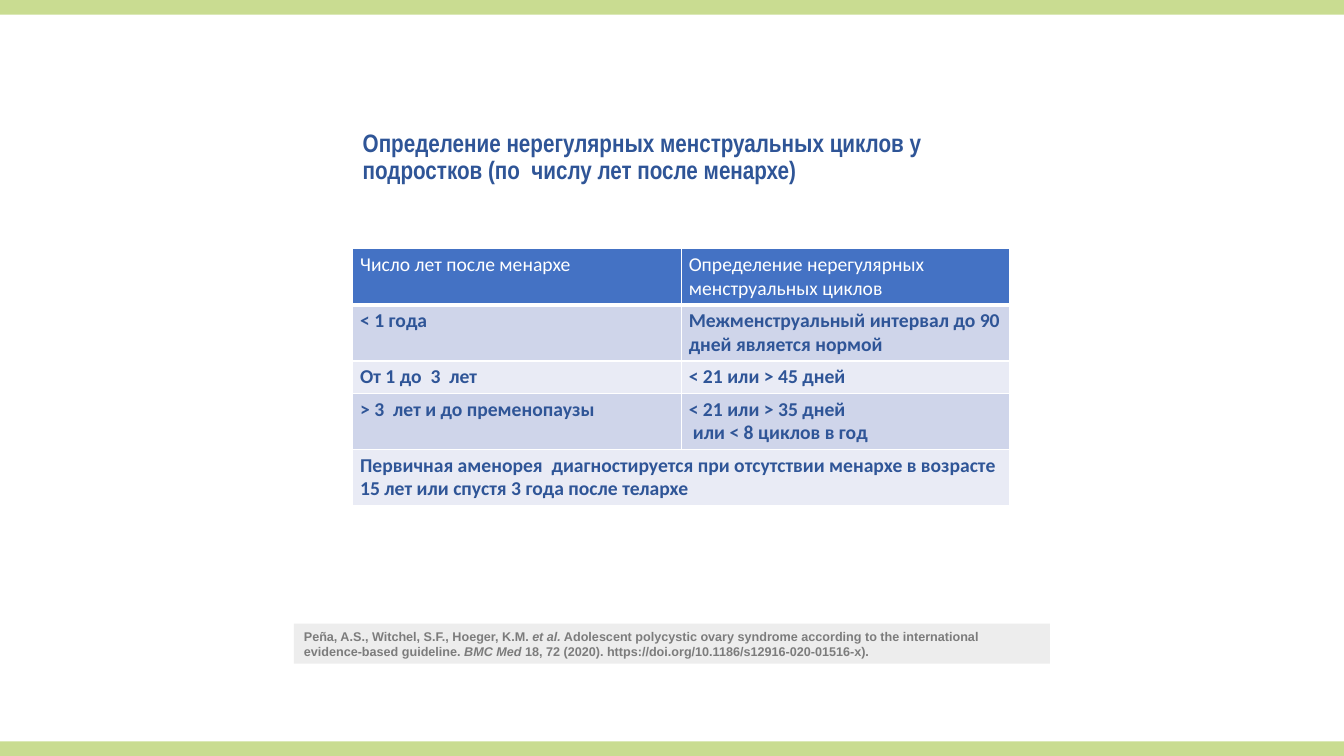
from lxml.etree import SubElement
from pptx import Presentation
from pptx.dml.color import RGBColor
from pptx.enum.shapes import MSO_SHAPE
from pptx.enum.text import MSO_ANCHOR, MSO_AUTO_SIZE, PP_ALIGN
from pptx.oxml.ns import qn
from pptx.util import Pt

PX = 9525
SLIDE_W, SLIDE_H = 1280, 720
BAR_H = 14
COLUMN_W = 313
ROW_HEIGHTS = [52, 52, 30, 52, 52]
SECOND_LINE_INDENT = 4

WHITE = RGBColor(0xFF, 0xFF, 0xFF)
GREEN = RGBColor(0xC9, 0xDC, 0x91)
HEADER_BLUE = RGBColor(0x44, 0x72, 0xC4)
TEXT_BLUE = RGBColor(0x2F, 0x55, 0x97)
BAND_DARK = RGBColor(0xCF, 0xD5, 0xEA)
BAND_LIGHT = RGBColor(0xE9, 0xEB, 0xF5)
CITATION_FILL = RGBColor(0xED, 0xED, 0xED)
CITATION_GREY = RGBColor(0x7C, 0x7C, 0x7C)

TITLE = "Определение нерегулярных менструальных циклов у подростков (по  числу лет после менархе)"
CYCLE_ROWS = [
    ["Число лет после менархе", "Определение нерегулярных менструальных циклов"],
    ["< 1 года", "Межменструальный интервал до 90 дней является нормой"],
    ["От 1 до  3  лет", "< 21 или > 45 дней"],
    ["> 3  лет и до пременопаузы", "< 21 или > 35 дней\nили < 8 циклов в год"],
    ["Первичная аменорея  диагностируется при отсутствии менархе в возрасте 15 лет или спустя 3 года после телархе", ""],
]
CITATION = [
    ("Peña, A.S., Witchel, S.F., Hoeger, K.M. ", False),
    ("et al.", True),
    (" Adolescent polycystic ovary syndrome according to the international evidence-based guideline. ", False),
    ("BMC Med", True),
    (" 18, 72 (2020). https://doi.org/10.1186/s12916-020-01516-x).", False),
]


def add_text(paragraph, text, *, size, font, color, bold=True, italic=False):
    run = paragraph.add_run()
    run.text = text
    run.font.size = Pt(size)
    run.font.name = font
    run.font.color.rgb = color
    run.font.bold = bold
    run.font.italic = italic


def add_rect(slide, left, top, width, height, color):
    rect = slide.shapes.add_shape(
        MSO_SHAPE.RECTANGLE, left * PX, top * PX, width * PX, height * PX)
    rect.shadow.inherit = False
    rect.fill.solid()
    rect.fill.fore_color.rgb = color
    rect.line.fill.background()
    return rect


def add_title(slide):
    title = slide.shapes.add_textbox(336 * PX, 113 * PX, 594 * PX, 75 * PX)
    frame = title.text_frame
    frame.word_wrap = True
    frame.vertical_anchor = MSO_ANCHOR.MIDDLE
    heading = frame.paragraphs[0]
    heading.line_spacing = 0.9
    add_text(heading, TITLE, size=18, font="Arial Narrow", color=TEXT_BLUE)


def set_borders(cell, bottom_width):
    properties = cell._tc.get_or_add_tcPr()
    sides = [("a:lnL", 1), ("a:lnR", 1), ("a:lnT", 1), ("a:lnB", bottom_width)]
    for position, (side, width) in enumerate(sides):
        border = SubElement(properties, qn(side), w=str(Pt(width)))
        fill = SubElement(border, qn("a:solidFill"))
        SubElement(fill, qn("a:srgbClr"), val=str(WHITE))
        properties.insert(position, border)


def fill_cell(cell, text, is_header, color):
    cell.fill.solid()
    cell.fill.fore_color.rgb = color
    set_borders(cell, 3 if is_header else 1)
    cell.margin_left = cell.margin_right = 7 * PX
    cell.margin_top = cell.margin_bottom = 4 * PX
    frame = cell.text_frame
    for number, line in enumerate(text.splitlines()):
        paragraph = frame.add_paragraph() if number else frame.paragraphs[0]
        if number:
            paragraph._p.get_or_add_pPr().set("marL", str(SECOND_LINE_INDENT * PX))
        add_text(paragraph, line, size=14, font="Calibri",
                 color=WHITE if is_header else TEXT_BLUE, bold=not is_header)


def add_cycle_table(slide):
    table = slide.shapes.add_table(
        len(CYCLE_ROWS), 2, 336 * PX, 237 * PX,
        2 * COLUMN_W * PX, sum(ROW_HEIGHTS) * PX).table
    for column in table.columns:
        column.width = COLUMN_W * PX
    for row, height in zip(table.rows, ROW_HEIGHTS):
        row.height = height * PX
    for r, texts in enumerate(CYCLE_ROWS):
        band = BAND_DARK if r % 2 else BAND_LIGHT
        for c, text in enumerate(texts):
            fill_cell(table.cell(r, c), text, r == 0, band if r else HEADER_BLUE)
    last = len(CYCLE_ROWS) - 1
    table.cell(last, 0).merge(table.cell(last, 1))


def add_citation(slide):
    citation = add_rect(slide, 280, 594, 720, 38, CITATION_FILL)
    frame = citation.text_frame
    frame.word_wrap = True
    frame.auto_size = MSO_AUTO_SIZE.SHAPE_TO_FIT_TEXT
    frame.vertical_anchor = MSO_ANCHOR.TOP
    reference = frame.paragraphs[0]
    reference.alignment = PP_ALIGN.LEFT
    for text, italic in CITATION:
        add_text(reference, text, size=9, font="Arial",
                 color=CITATION_GREY, italic=italic)


def main():
    deck = Presentation()
    deck.slide_width = SLIDE_W * PX
    deck.slide_height = SLIDE_H * PX
    slide = deck.slides.add_slide(deck.slide_layouts[6])
    for top in (0, SLIDE_H - BAR_H):
        add_rect(slide, 0, top, SLIDE_W, BAR_H, GREEN)
    add_cycle_table(slide)
    add_title(slide)
    add_citation(slide)
    deck.save("out.pptx")


if __name__ == "__main__":
    main()
